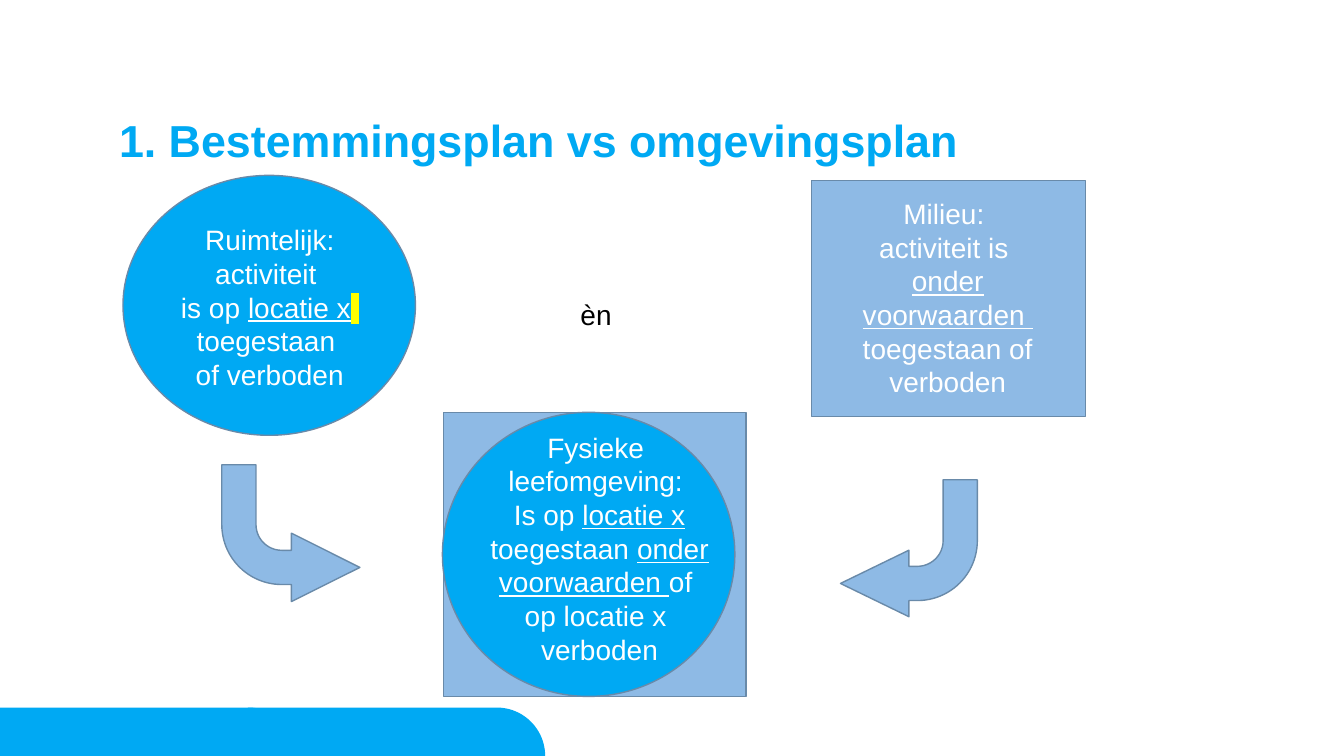
from math import cos, pi, sin

from lxml.etree import SubElement
from pptx import Presentation
from pptx.dml.color import RGBColor as Rgb
from pptx.enum.shapes import MSO_SHAPE as Kind
from pptx.enum.text import PP_ALIGN as Align
from pptx.oxml.ns import qn
from pptx.util import Cm, Pt

BLUE, PALE, EDGE = "00A9F3", "8EBAE5", "698AA9"
WHITE, BLACK, YELLOW = "FFFFFF", "000000", "FFFF00"

BARS = [0, 6.25]
BAR_TOP, BAR_WIDE, BAR_HIGH = 17.83, 7.49, 1.22

SHAPES = [
    (Kind.RECTANGLE, (11.18, 10.39, 7.62, 7.16), PALE),
    (Kind.OVAL, (11.15, 10.39, 7.37, 7.16), BLUE),
    (Kind.OVAL, (3.1, 4.42, 7.37, 6.55), BLUE),
    (Kind.RECTANGLE, (20.45, 4.55, 6.91, 5.94), PALE),
]

ARROWS = [
    ((5.59, 11.71, 3.48, 3.45), 0.25, True),
    ((21.18, 12.09, 3.45, 3.45), 0.243, False),
]

TITLE = [[("1. Bestemmingsplan vs omgevingsplan", "")]]
AND = [[("èn", "")]]
SPACE = [[
    ("Ruimtelijk: activiteit \nis op ", ""),
    ("locatie x", "line"),
    (" ", "mark"),
    ("\ntoegestaan \nof verboden", ""),
]]
MILIEU = [[
    ("Milieu: \nactiviteit is \n", ""),
    ("onder voorwaarden \n", "line"),
    ("toegestaan of verboden", ""),
]]
BOTH = [
    [("Fysieke \nleefomgeving: ", "")],
    [
        ("Is op ", ""),
        ("locatie x ", "line"),
        ("toegestaan ", ""),
        ("onder voorwaarden ", "line"),
        ("of \nop locatie x \nverboden", ""),
    ],
]

NOTES = [
    (SPACE, (3.61, 5.49, 6.38, 4.52), WHITE, Align.CENTER),
    (BOTH, (11.3, 10.72, 7.62, 6.25), WHITE, Align.CENTER),
    (MILIEU, (20.75, 4.83, 6.27, 5.38), WHITE, Align.CENTER),
    (AND, (14.38, 7.37, 4.7, 1.12), BLACK, Align.LEFT),
]


def place(box):
    return [Cm(size) for size in box]


def tint(fill, color):
    fill.solid()
    fill.fore_color.rgb = Rgb.from_string(color)


def draw(kind, box, color):
    shape = slide.shapes.add_shape(kind, *place(box))
    shape.shadow.inherit = False
    tint(shape.fill, color)
    tint(shape.line.fill, EDGE)
    shape.line.width = Pt(1)
    return shape


def bar(left):
    right, base = left + BAR_WIDE, BAR_TOP + BAR_HIGH
    turns = [pi / 2 * step / 24 for step in range(25)]
    curve = [(right - BAR_HIGH + BAR_HIGH * sin(turn),
              base - BAR_HIGH * cos(turn)) for turn in turns]
    points = [(left, BAR_TOP)] + curve
    build = slide.shapes.build_freeform(Cm(left), Cm(base))
    build.add_line_segments([(Cm(x), Cm(y)) for x, y in points])
    shape = build.convert_to_shape()
    shape.shadow.inherit = False
    tint(shape.fill, BLUE)
    shape.line.fill.background()


def style(run, look, color, size, bold):
    font = run.font
    font.name, font.size, font.bold = "Arial", Pt(size), bold
    tint(font.fill, color)
    if look == "line":
        font.underline = True
    if look == "mark":
        props = run._r.get_or_add_rPr()
        mark = SubElement(props, qn("a:highlight"))
        SubElement(mark, qn("a:srgbClr")).set("val", YELLOW)
        props.find(qn("a:solidFill")).addnext(mark)


def write(paras, box, color, align, size=20, bold=False):
    frame = slide.shapes.add_textbox(*place(box)).text_frame
    frame.word_wrap = True
    for i, parts in enumerate(paras):
        para = frame.add_paragraph() if i else frame.paragraphs[0]
        para.alignment = align
        for text, look in parts:
            for j, line in enumerate(text.split("\n")):
                if j:
                    para.add_line_break()
                if line:
                    run = para.add_run()
                    run.text = line
                    style(run, look, color, size, bold)
    return frame


deck = Presentation()
deck.slide_width, deck.slide_height = Cm(33.87), Cm(19.05)
slide = deck.slides.add_slide(deck.slide_layouts[6])

for left in BARS:
    bar(left)
for item in SHAPES:
    draw(*item)
for note in NOTES:
    write(*note)

head = write(TITLE, (3, 3, 27.86, 2.01), BLUE, Align.LEFT, 32, True)
head.margin_left = head.margin_right = 0
head.margin_top = head.margin_bottom = 0
head.paragraphs[0].line_spacing = 0.9

for box, tip, flip in ARROWS:
    arrow = draw(Kind.BENT_ARROW, box, PALE)
    arrow.rotation = 180
    for i, value in enumerate((0.25, tip, 0.5, 0.438)):
        arrow.adjustments[i] = value
    if flip:
        arrow._element.spPr.xfrm.set("flipH", "1")

deck.save("out.pptx")
